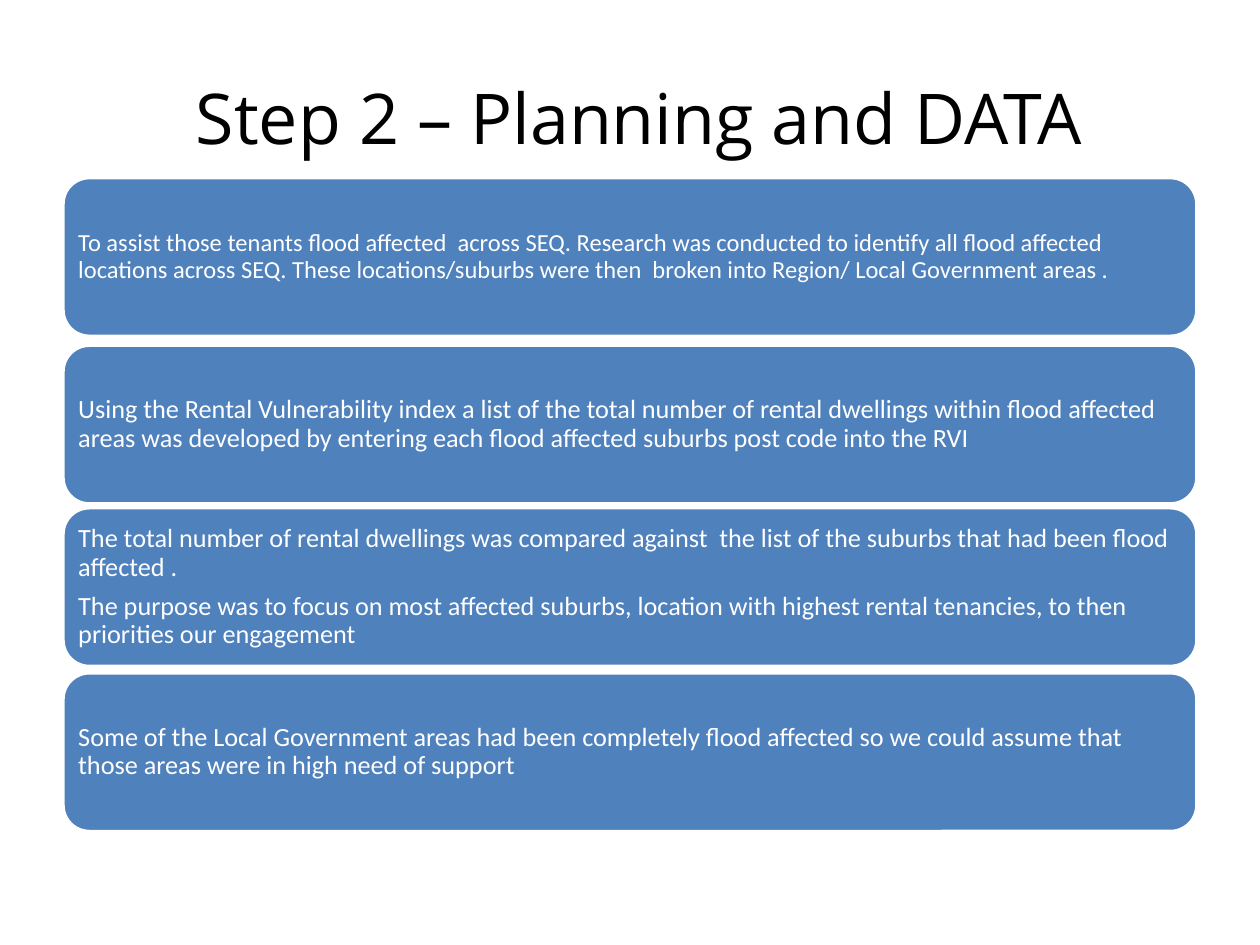
from pptx import Presentation
from pptx import util as u
from pptx.dml.color import RGBColor
from pptx.enum import shapes, text

BLACK = RGBColor(0x00, 0x00, 0x00)
WHITE = RGBColor(0xFF, 0xFF, 0xFF)
BLUE = RGBColor(0x4F, 0x81, 0xBD)

# Each step: top in inches, text size, paragraphs
STEPS = [
    (1.41, 14, ["To assist those tenants flood affected  across SEQ. Research was conducted to "
                "identify all flood affected locations across SEQ. These locations/suburbs were "
                "then  broken into Region/ Local Government areas ."]),
    (2.74, 15, ["Using the Rental Vulnerability index a list of the total number of rental "
                "dwellings within flood affected areas was developed by entering each flood "
                "affected suburbs post code into the RVI"]),
    (4.03, 15, ["The total number of rental dwellings was compared against  the list of the "
                "suburbs that had been flood affected .",
                "The purpose was to focus on most affected suburbs, location with highest rental "
                "tenancies, to then priorities our engagement"]),
    (5.34, 15, ["Some of the Local Government areas had been completely flood affected so we "
                "could assume that those areas were in high need of support"]),
]


def style_font(font, name, size, color):
    font.name = name
    font.size = u.Pt(size)
    font.color.rgb = color


def add_title(page, left, top, width, height, wording):
    box = page.shapes.add_textbox(left, top, width, height)
    frame = box.text_frame
    frame.word_wrap = True
    frame.vertical_anchor = text.MSO_ANCHOR.MIDDLE
    frame.text = wording
    para = frame.paragraphs[0]
    para.alignment = text.PP_ALIGN.CENTER
    style_font(para.runs[0].font, "Open Sans", 40, BLACK)


def add_step(page, left, top, width, height, size, wording):
    panel = page.shapes.add_shape(
        shapes.MSO_SHAPE.ROUNDED_RECTANGLE, left, top, width, height)
    panel.shadow.inherit = False
    panel.fill.solid()
    panel.fill.fore_color.rgb = BLUE
    panel.line.color.rgb = WHITE
    panel.line.width = u.Pt(2)

    frame = panel.text_frame
    frame.word_wrap = True
    frame.vertical_anchor = text.MSO_ANCHOR.MIDDLE
    frame.margin_left = frame.margin_right = u.Inches(0.06)
    frame.margin_top = frame.margin_bottom = u.Inches(0.06)
    frame.text = "\n".join(wording)
    for para in frame.paragraphs:
        para.alignment = text.PP_ALIGN.LEFT
        para.line_spacing = 0.9
        para.space_after = u.Pt(6)
        style_font(para.runs[0].font, "Calibri", size, WHITE)


def main():
    deck = Presentation()
    deck.slide_width, deck.slide_height = u.Inches(10), u.Inches(7.5)
    page = deck.slides.add_slide(deck.slide_layouts[6])

    # Heading, set slightly right of centre
    add_title(page, u.Inches(0.57), u.Inches(0.3), u.Inches(9), u.Inches(1.25),
              "Step 2 – Planning and DATA")

    # Stack of step panels
    for top, size, wording in STEPS:
        add_step(page, u.Inches(0.5), u.Inches(top), u.Inches(9), u.Inches(1.26),
                 size, wording)

    deck.save("out.pptx")


if __name__ == "__main__":
    main()
